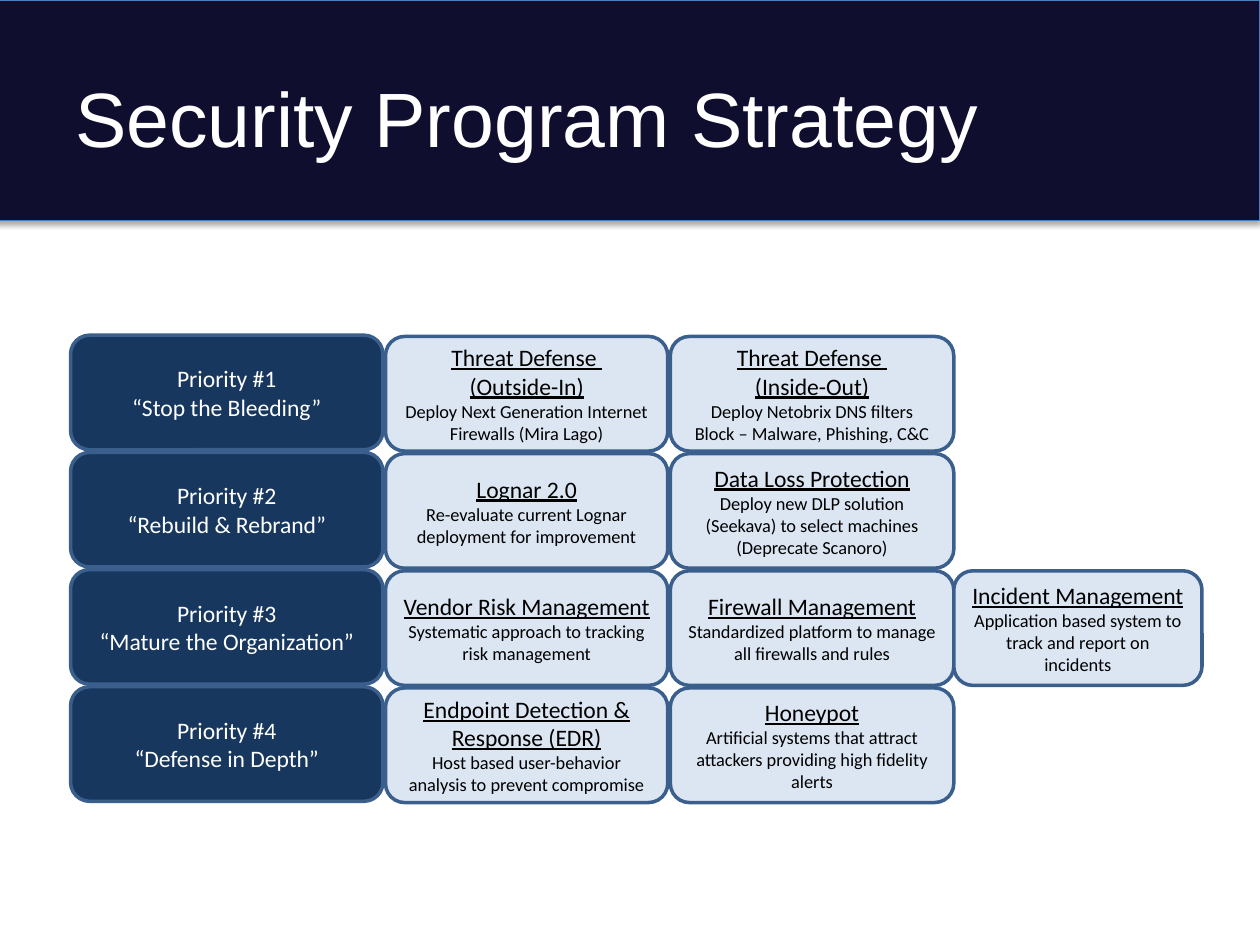
from dataclasses import dataclass

from lxml.etree import SubElement
from pptx import Presentation
from pptx.dml.color import RGBColor
from pptx.enum.shapes import MSO_SHAPE
from pptx.enum.text import MSO_ANCHOR, PP_ALIGN
from pptx.oxml.ns import qn
from pptx.slide import Slide
from pptx.util import Inches, Pt

COLUMNS = [(0.56, 2.48), (3.06, 2.24), (5.32, 2.25), (7.57, 1.97)]
FIRST_ROW, ROW_PITCH, ROW_HEIGHT = 2.66, 0.93, 0.91

PRIORITIES = [
    (["Priority #1", "“Stop the Bleeding”"], [
        (["Threat Defense ", "(Outside-In)"],
         ["Deploy Next Generation Internet Firewalls (Mira Lago)"]),
        (["Threat Defense ", "(Inside-Out)"],
         ["Deploy Netobrix DNS filters", "Block – Malware, Phishing, C&C"]),
    ]),
    (["Priority #2", "“Rebuild & Rebrand”"], [
        (["Lognar 2.0"],
         ["Re-evaluate current Lognar deployment for improvement"]),
        (["Data Loss Protection"],
         ["Deploy new DLP solution (Seekava) to select machines",
          "(Deprecate Scanoro)"]),
    ]),
    (["Priority #3", "“Mature the Organization”"], [
        (["Vendor Risk Management"],
         ["Systematic approach to tracking risk management"]),
        (["Firewall Management"],
         ["Standardized platform to manage all firewalls and rules"]),
        (["Incident Management"],
         ["Application based system to track and report on incidents"]),
    ]),
    (["Priority #4", "“Defense in Depth”"], [
        (["Endpoint Detection & Response (EDR)"],
         ["Host based user-behavior analysis to prevent compromise"]),
        (["Honeypot"],
         ["Artificial systems that attract attackers providing high fidelity alerts"]),
    ]),
]


def color(code):
    return RGBColor.from_string(code)


@dataclass
class StrategySlide:
    """Draws the header and the priority grid in one style."""
    slide: Slide
    navy: str = "100E2F"
    header_edge: str = "4B7EBC"
    priority_fill: str = "17375E"
    project_fill: str = "DCE6F2"
    box_edge: str = "3A5F8C"
    white: str = "FFFFFF"
    black: str = "000000"
    heading_size: float = 13.5
    detail_size: float = 10.5

    def block(self, kind, left, top, width, height, fill, edge, weight):
        block = self.slide.shapes.add_shape(
            kind, Inches(left), Inches(top), Inches(width), Inches(height))
        block.shadow.inherit = False
        block.fill.solid()
        block.fill.fore_color.rgb = color(fill)
        block.line.color.rgb = color(edge)
        block.line.width = Pt(weight)
        return block

    def add_words(self, paragraph, words, font, size, ink, underline=False):
        run = paragraph.add_run()
        run.text = words
        run.font.name = font
        run.font.size = Pt(size)
        run.font.color.rgb = color(ink)
        run.font.underline = underline

    def header(self, title):
        band = self.block(MSO_SHAPE.RECTANGLE, -0.04, 0, 10.04, 1.75,
                          self.navy, self.header_edge, 0.75)
        effects = band.element.spPr.find(qn("a:effectLst"))
        shadow = SubElement(effects, qn("a:outerShdw"), blurRad=str(Pt(3.1)),
                            dist=str(Pt(1.8)), dir="5400000", rotWithShape="0")
        shade = SubElement(shadow, qn("a:srgbClr"), val=self.black)
        SubElement(shade, qn("a:alpha"), val="35000")
        heading = self.slide.shapes.add_textbox(
            Inches(0.5), Inches(0.3), Inches(9), Inches(1.25)).text_frame
        heading.word_wrap = True
        heading.vertical_anchor = MSO_ANCHOR.MIDDLE
        self.add_words(heading.paragraphs[0], title, "Arial", 44, self.white)

    def cell(self, column, row, lines, fill, ink, drop=0):
        left, width = COLUMNS[column]
        box = self.block(MSO_SHAPE.ROUNDED_RECTANGLE, left,
                         FIRST_ROW + row * ROW_PITCH + drop, width, ROW_HEIGHT,
                         fill, self.box_edge, 2)
        frame = box.text_frame
        frame.word_wrap = True
        frame.vertical_anchor = MSO_ANCHOR.MIDDLE
        for index, (words, size, underline) in enumerate(lines):
            paragraph = frame.add_paragraph() if index else frame.paragraphs[0]
            paragraph.alignment = PP_ALIGN.CENTER
            self.add_words(paragraph, words, "Calibri", size, ink, underline)

    def priority(self, row, label):
        lines = [(words, self.heading_size, False) for words in label]
        self.cell(0, row, lines, self.priority_fill, self.white)

    def project(self, column, row, heading, details):
        lines = [(words, self.heading_size, True) for words in heading]
        lines += [(words, self.detail_size, False) for words in details]
        self.cell(column, row, lines, self.project_fill, self.black, drop=0.01)


def main():
    deck = Presentation()
    deck.slide_width, deck.slide_height = Inches(10), Inches(7.5)
    strategy = StrategySlide(deck.slides.add_slide(deck.slide_layouts[6]))
    strategy.header("Security Program Strategy")
    for row, (label, projects) in enumerate(PRIORITIES):
        strategy.priority(row, label)
        for column, (heading, details) in enumerate(projects, start=1):
            strategy.project(column, row, heading, details)
    deck.save("out.pptx")


if __name__ == "__main__":
    main()
